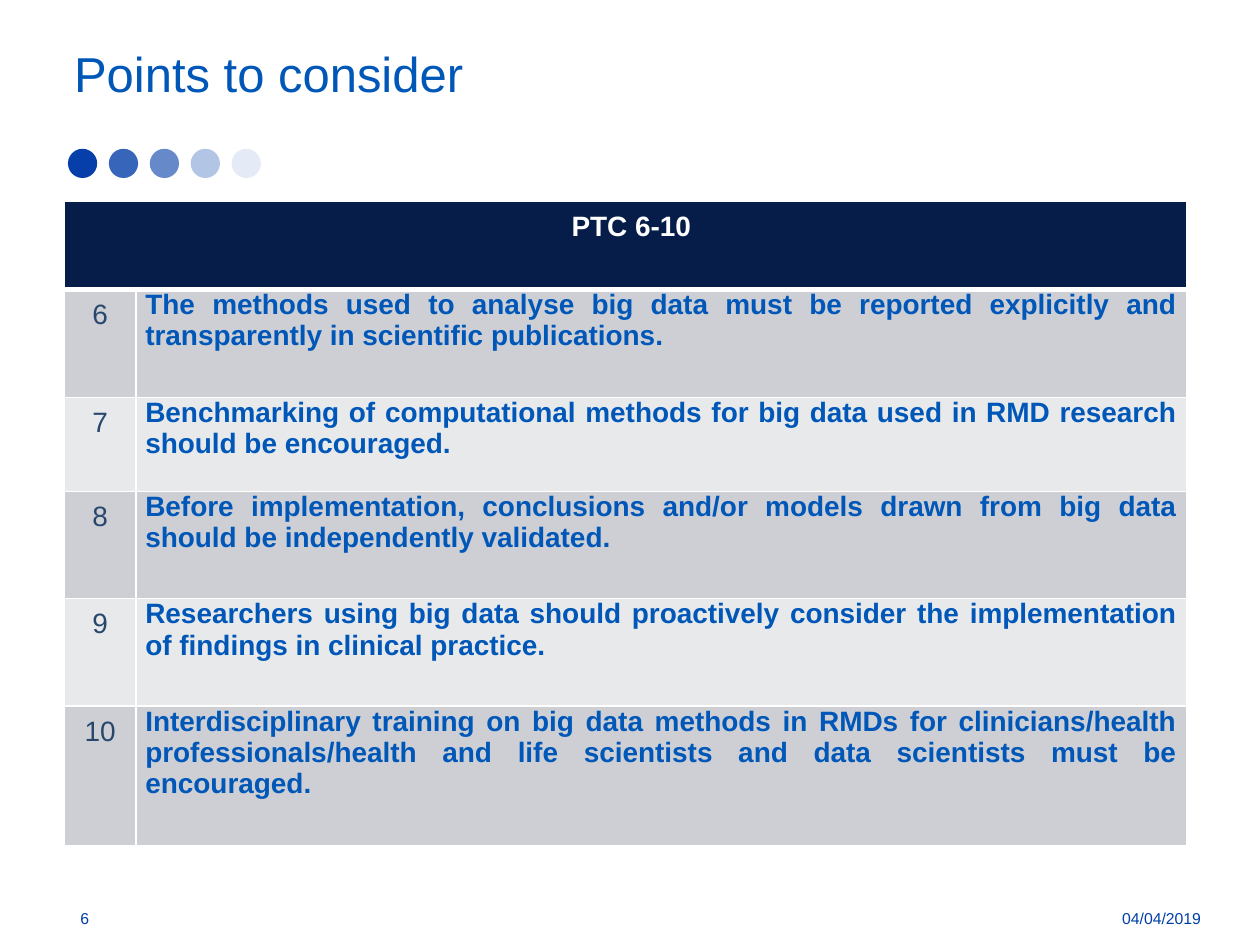
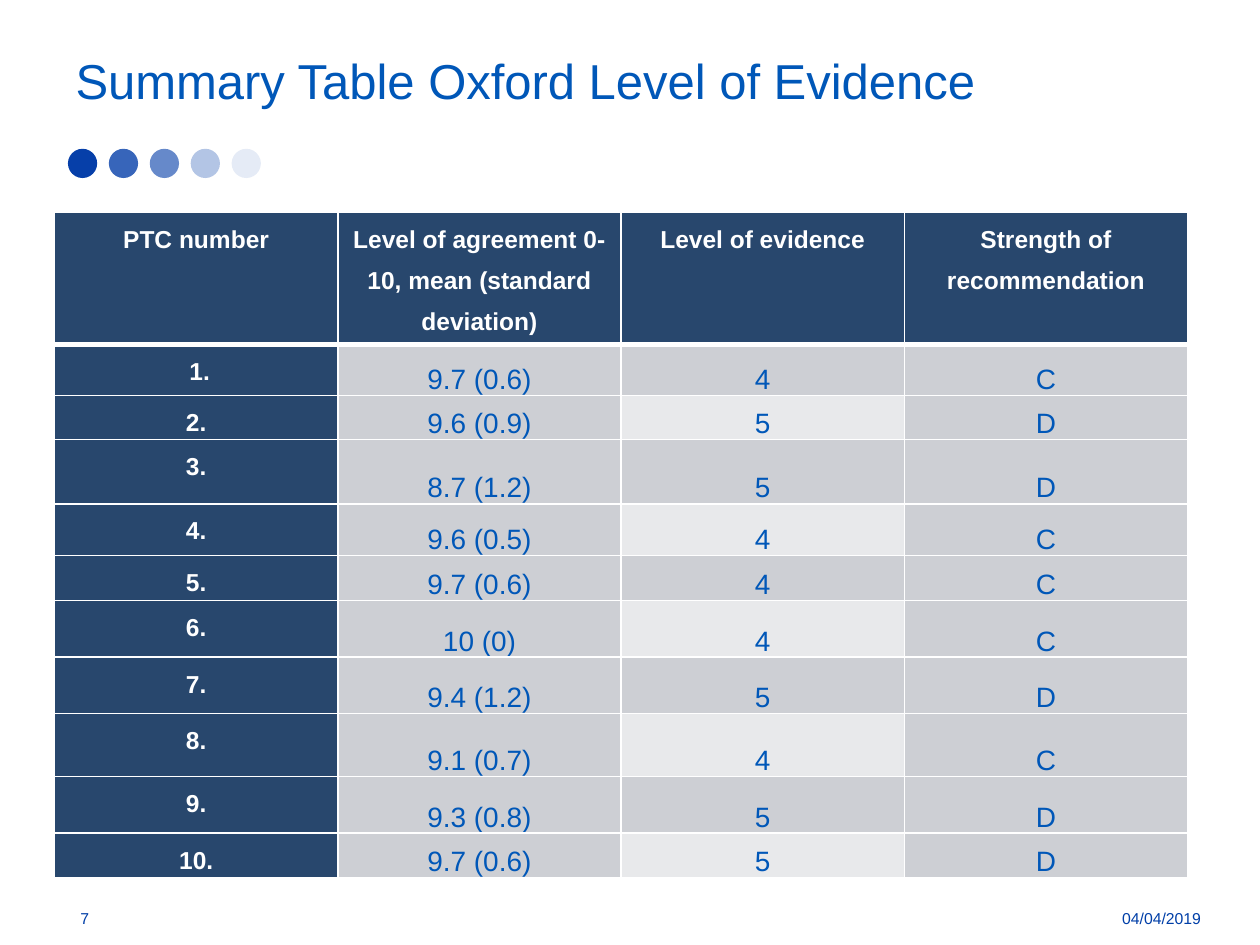
from dataclasses import dataclass

from lxml import etree
from pptx import Presentation
from pptx import util as u
from pptx.dml.color import RGBColor
from pptx.enum import shapes, text
from pptx.oxml import ns

# ---- Content ----
DATE = "04/04/2019"
POINTS_TITLE = "Points to consider"
POINTS_HEADER = "PTC 6-10"
POINTS = [
    (6, "The methods used to analyse big data must be reported explicitly and "
        "transparently in scientific publications."),
    (7, "Benchmarking of computational methods for big data used in RMD research "
        "should be encouraged."),
    (8, "Before implementation, conclusions and/or models drawn from big data "
        "should be independently validated."),
    (9, "Researchers using big data should proactively consider the implementation "
        "of findings in clinical practice."),
    (10, "Interdisciplinary training on big data methods in RMDs for clinicians/health "
         "professionals/health and life scientists and data scientists must be encouraged."),
]
EVIDENCE_TITLE = "Summary Table Oxford Level of Evidence"
EVIDENCE_HEADER = ["PTC number", "Level of agreement 0-10, mean (standard deviation)",
                   "Level of evidence", "Strength of recommendation"]
EVIDENCE = [
    (" 1.", "9.7 (0.6)", "4", "C"),
    ("2.", "9.6 (0.9)", "5", "D"),
    ("3.", "8.7 (1.2)", "5", "D"),
    ("4.", "9.6 (0.5)", "4", "C"),
    ("5.", "9.7 (0.6)", "4", "C"),
    ("6.", "10 (0)", "4", "C"),
    ("7.", "9.4 (1.2)", "5", "D"),
    ("8.", "9.1 (0.7)", "4", "C"),
    ("9.", "9.3 (0.8)", "5", "D"),
    ("10.", "9.7 (0.6)", "5", "D"),
]

# ---- Row heights and column widths in centimetres ----
POINTS_COLUMNS = [1.44, 21.18]
POINTS_ROWS = [1.78, 2.18, 1.9, 2.16, 2.16, 2.81]
EVIDENCE_COLUMNS = [5.71] * 4
EVIDENCE_ROWS = [2.5, 1.02, 0.84, 1.3, 1.04, 0.91, 1.14, 1.14, 1.27, 1.14, 0.81]


@dataclass(frozen=True)
class Theme:
    font: str = "Arial"
    blue: str = "0057B8"
    dot: str = "063FA9"
    footer: str = "003FA8"
    navy: str = "071D49"
    slate: str = "28476D"
    white: str = "FFFFFF"
    grey: str = "CDCFD4"
    pale: str = "E8E9EB"
    title_size: int = 28
    body_size: int = 16
    label_size: int = 14
    footer_size: int = 9


THEME = Theme()
DOT_OPACITY = [100, 80, 61, 30, 10]
ALIGN = text.PP_ALIGN
ANCHOR = text.MSO_ANCHOR


# ---- Text and cell helpers ----
def set_values(target, values):
    for name, value in values.items():
        setattr(target, name, value)


def write(frame, words, size, color, bold=False, **paragraph_format):
    para = frame.paragraphs[0]
    set_values(para, paragraph_format)
    span = para.add_run()
    span.text = words
    set_values(span.font, {"name": THEME.font, "size": u.Pt(size), "bold": bold})
    span.font.color.rgb = RGBColor.from_string(color)
    return para


def set_borders(cell, **widths):
    properties = cell._tc.get_or_add_tcPr()
    for index, side in enumerate("LRTB"):
        line = etree.Element(ns.qn(f"a:ln{side}"), w=str(u.Pt(widths.get(side, 1))))
        solid = etree.SubElement(line, ns.qn("a:solidFill"))
        etree.SubElement(solid, ns.qn("a:srgbClr"), val=THEME.white)
        properties.insert(index, line)


def format_cell(cell, fill, row, side_margin, end_margin, anchor=ANCHOR.TOP):
    cell.fill.solid()
    cell.fill.fore_color.rgb = RGBColor.from_string(fill)
    set_values(cell, {
        "margin_left": u.Cm(side_margin), "margin_right": u.Cm(side_margin),
        "margin_top": u.Cm(end_margin), "margin_bottom": u.Cm(end_margin),
        "vertical_anchor": anchor})
    set_borders(cell, T=3 if row == 1 else 1, B=3 if row == 0 else 1)


# ---- Parts the slides share ----
def add_footer(page, words, left, width, align):
    box = page.shapes.add_textbox(u.Cm(left), u.Cm(18.01), u.Cm(width), u.Cm(1.02))
    set_values(box.text_frame, {"word_wrap": True, "vertical_anchor": ANCHOR.MIDDLE})
    write(box.text_frame, words, THEME.footer_size, THEME.footer, alignment=align)


def add_dots(page):
    for index, opacity in enumerate(DOT_OPACITY):
        dot = page.shapes.add_shape(shapes.MSO_SHAPE.OVAL, u.Cm(1.37 + 0.825 * index),
                                    u.Cm(3), u.Cm(0.59), u.Cm(0.59))
        dot.shadow.inherit = False
        dot.line.fill.background()
        dot.fill.solid()
        dot.fill.fore_color.rgb = RGBColor.from_string(THEME.dot)
        if opacity < 100:
            color = dot._element.spPr.find(".//" + ns.qn("a:srgbClr"))
            etree.SubElement(color, ns.qn("a:alpha"), val=str(opacity * 1000))


def add_page(deck, title, number, left, top):
    page = deck.slides.add_slide(deck.slide_layouts[5])
    heading = page.shapes.title
    set_values(heading, {"left": u.Cm(left), "top": u.Cm(top),
                         "width": u.Cm(23.14), "height": u.Cm(1.75)})
    set_values(heading.text_frame, {"word_wrap": True, "vertical_anchor": ANCHOR.MIDDLE,
                                    "auto_size": text.MSO_AUTO_SIZE.NONE})
    write(heading.text_frame, title, THEME.title_size, THEME.blue,
          alignment=ALIGN.LEFT, line_spacing=0.9)
    add_dots(page)
    add_footer(page, str(number), 1.37, 2.44, ALIGN.LEFT)
    add_footer(page, DATE, 21.06, 3.4, ALIGN.RIGHT)
    return page


def add_grid(page, left, top, widths, heights):
    grid = page.shapes.add_table(len(heights), len(widths), u.Cm(left), u.Cm(top),
                                 u.Cm(sum(widths)), u.Cm(sum(heights))).table
    for column, width in zip(grid.columns, widths):
        column.width = u.Cm(width)
    for row, height in zip(grid.rows, heights):
        row.height = u.Cm(height)
    return grid


# ---- Slides ----
def build_points(deck):
    page = add_page(deck, POINTS_TITLE, 6, 1.24, 0.66)
    grid = add_grid(page, 1.3, 4.05, POINTS_COLUMNS, POINTS_ROWS)
    for column in range(2):
        format_cell(grid.cell(0, column), THEME.navy, 0, 0, 0.2)
    header = grid.cell(0, 0)
    header.merge(grid.cell(0, 1))
    para = write(header.text_frame, POINTS_HEADER, THEME.body_size, THEME.white,
                 bold=True, alignment=ALIGN.CENTER)
    para._p.get_or_add_pPr().set("marL", str(u.Cm(0.23)))
    for row, (number, point) in enumerate(POINTS, 1):
        fill = THEME.grey if row % 2 else THEME.pale
        number_cell, point_cell = grid.cell(row, 0), grid.cell(row, 1)
        format_cell(number_cell, fill, row, 0, 0.2)
        write(number_cell.text_frame, str(number), THEME.body_size, THEME.slate,
              alignment=ALIGN.CENTER)
        format_cell(point_cell, fill, row, 0.19, 0)
        write(point_cell.text_frame, point, THEME.body_size, THEME.blue,
              bold=True, alignment=ALIGN.JUSTIFY)


def build_evidence(deck):
    page = add_page(deck, EVIDENCE_TITLE, 7, 1.27, 0.82)
    grid = add_grid(page, 1.1, 4.28, EVIDENCE_COLUMNS, EVIDENCE_ROWS)
    for row, entries in enumerate([EVIDENCE_HEADER, *EVIDENCE]):
        for column, entry in enumerate(entries):
            cell = grid.cell(row, column)
            if row == 0 or column == 0:
                format_cell(cell, THEME.slate, row, 0.02, 0)
                write(cell.text_frame, entry, THEME.label_size, THEME.white, bold=True,
                      alignment=ALIGN.CENTER, line_spacing=1.5)
            else:
                striped = column == 2 and row % 2 == 0
                format_cell(cell, THEME.pale if striped else THEME.grey, row,
                            0.19, 0, ANCHOR.BOTTOM)
                write(cell.text_frame, entry, THEME.body_size, THEME.blue,
                      alignment=ALIGN.CENTER)


def main():
    deck = Presentation()
    set_values(deck, {"slide_width": u.Cm(25.4), "slide_height": u.Cm(19.05)})
    build_points(deck)
    build_evidence(deck)
    deck.save("out.pptx")


if __name__ == "__main__":
    main()
